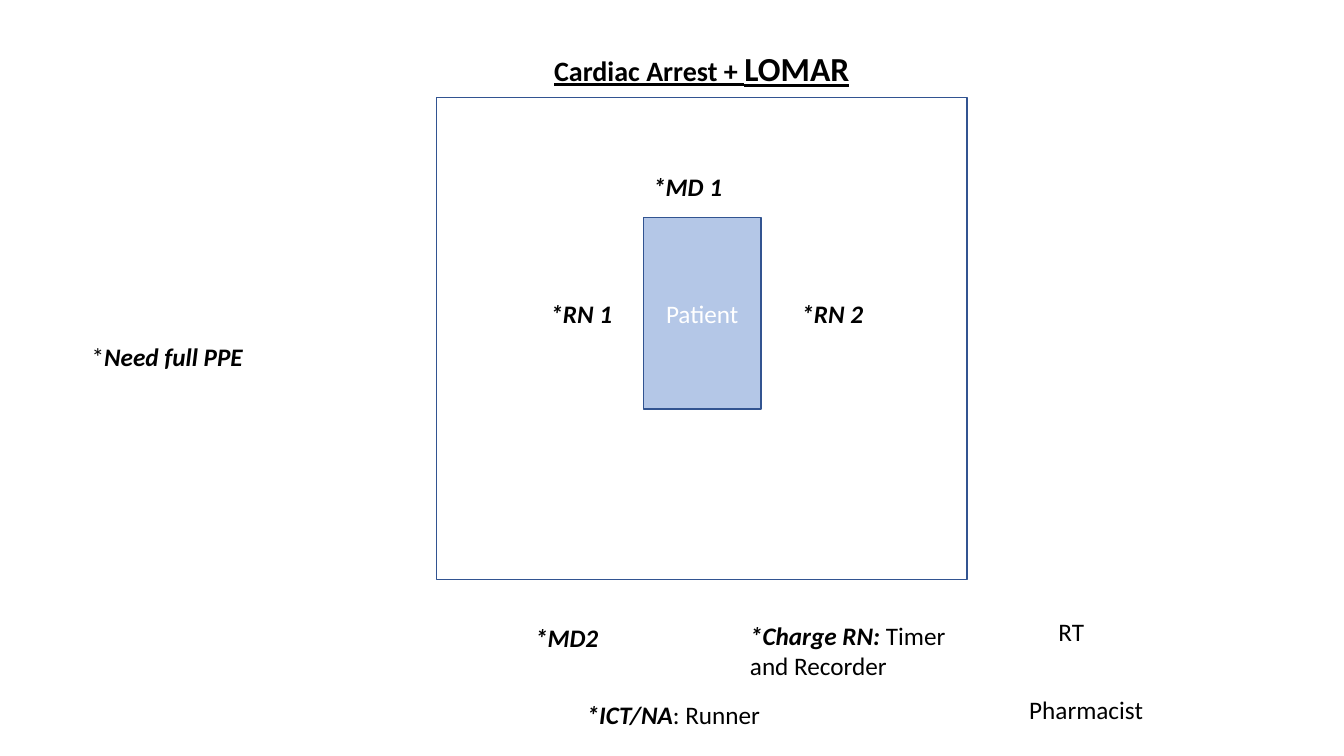
from pptx import Presentation
from pptx.dml.color import RGBColor
from pptx.enum.shapes import MSO_SHAPE
from pptx.enum.text import MSO_ANCHOR, MSO_AUTO_SIZE, PP_ALIGN
from pptx.util import Inches, Pt

RECTANGLE = MSO_SHAPE.RECTANGLE
TOP, MIDDLE = MSO_ANCHOR.TOP, MSO_ANCHOR.MIDDLE
NO_FIT, GROW = MSO_AUTO_SIZE.NONE, MSO_AUTO_SIZE.SHAPE_TO_FIT_TEXT
LEFT, CENTER = PP_ALIGN.LEFT, PP_ALIGN.CENTER

COLORS = {"text": "000000", "white": "FFFFFF", "bed": "B4C7E7", "outline": "325491"}
FONT = "Calibri"
BODY_SIZE = 18
COLUMNS, ROWS = 133.3, 75
LINE_ROWS = 4

TITLE_AREA = (53.1, 4.3, 33, 5)
TITLE_RUNS = [("Cardiac Arrest + ", 20), ("LOMAR", 24)]

ROOM_AREA = (43.3, 9.7, 52.6, 47.8)
BED_AREA = (63.8, 21.6, 11.7, 19)
BED_LABEL = "Patient"

BEDSIDE_ROW = 29.1
STAFF = [
    (BED_AREA[0], 16.5, BED_AREA[2], 1, LEFT, [("*MD 1", True)]),
    (53.6, BEDSIDE_ROW, 8.8, 1, LEFT, [("*RN 1", True)]),
    (78.5, BEDSIDE_ROW, 8.8, 1, LEFT, [("*RN 2", True)]),
    (49.3, 61.2, 13.8, 1, CENTER, [("*MD2", True)]),
    (73.4, 61, 23.3, 1.75, LEFT, [("*Charge RN: ", True), ("Timer and Recorder", False)]),
    (57.2, 68.9, 32.6, 1, LEFT, [("*ICT/NA", True), (": Runner", False)]),
    (101.1, 68.4, 14.6, 1, LEFT, [("Pharmacist", False)]),
    (104, 60.7, 5.3, 1, LEFT, [("RT", False)]),
    (8.1, 33.4, 22.5, 1, LEFT, [("*", False), ("Need full PPE", True)]),
]

presentation = Presentation()
presentation.slide_width, presentation.slide_height = Inches(13.33), Inches(7.5)
slide = presentation.slides.add_slide(presentation.slide_layouts[5])


def color(name):
    return RGBColor.from_string(COLORS[name])


def place(area):
    left, top, width, height = area
    across = presentation.slide_width / COLUMNS
    down = presentation.slide_height / ROWS
    return int(left * across), int(top * down), int(width * across), int(height * down)


def style(paragraph, alignment, font_color="text"):
    paragraph.alignment = alignment
    paragraph.line_spacing = 1.0
    paragraph.font.name = FONT
    paragraph.font.size = Pt(BODY_SIZE)
    paragraph.font.color.rgb = color(font_color)


def add_rectangle(area, fill):
    shape = slide.shapes.add_shape(RECTANGLE, *place(area))
    shape.shadow.inherit = False
    shape.fill.solid()
    shape.fill.fore_color.rgb = color(fill)
    shape.line.color.rgb = color("outline")
    shape.line.width = Pt(1)
    return shape


def add_staff(left, top, width, lines, alignment, parts):
    area = (left, top, width, lines * LINE_ROWS)
    frame = slide.shapes.add_textbox(*place(area)).text_frame
    frame.word_wrap = True
    frame.auto_size = GROW
    paragraph = frame.paragraphs[0]
    style(paragraph, alignment)
    for text, emphasis in parts:
        run = paragraph.add_run()
        run.text = text
        run.font.bold = run.font.italic = emphasis


def fill_title():
    title = slide.shapes.title
    title.left, title.top, title.width, title.height = place(TITLE_AREA)
    frame = title.text_frame
    frame.word_wrap = True
    frame.auto_size = NO_FIT
    frame.vertical_anchor = TOP
    paragraph = frame.paragraphs[0]
    style(paragraph, CENTER)
    paragraph.font.bold = paragraph.font.underline = True
    for text, size in TITLE_RUNS:
        run = paragraph.add_run()
        run.text = text
        run.font.size = Pt(size)
        run.font.bold = run.font.underline = True


fill_title()
add_rectangle(ROOM_AREA, "white")
bed = add_rectangle(BED_AREA, "bed")
bed.text_frame.text = BED_LABEL
bed.text_frame.vertical_anchor = MIDDLE
style(bed.text_frame.paragraphs[0], CENTER, "white")
for person in STAFF:
    add_staff(*person)

presentation.save("out.pptx")
